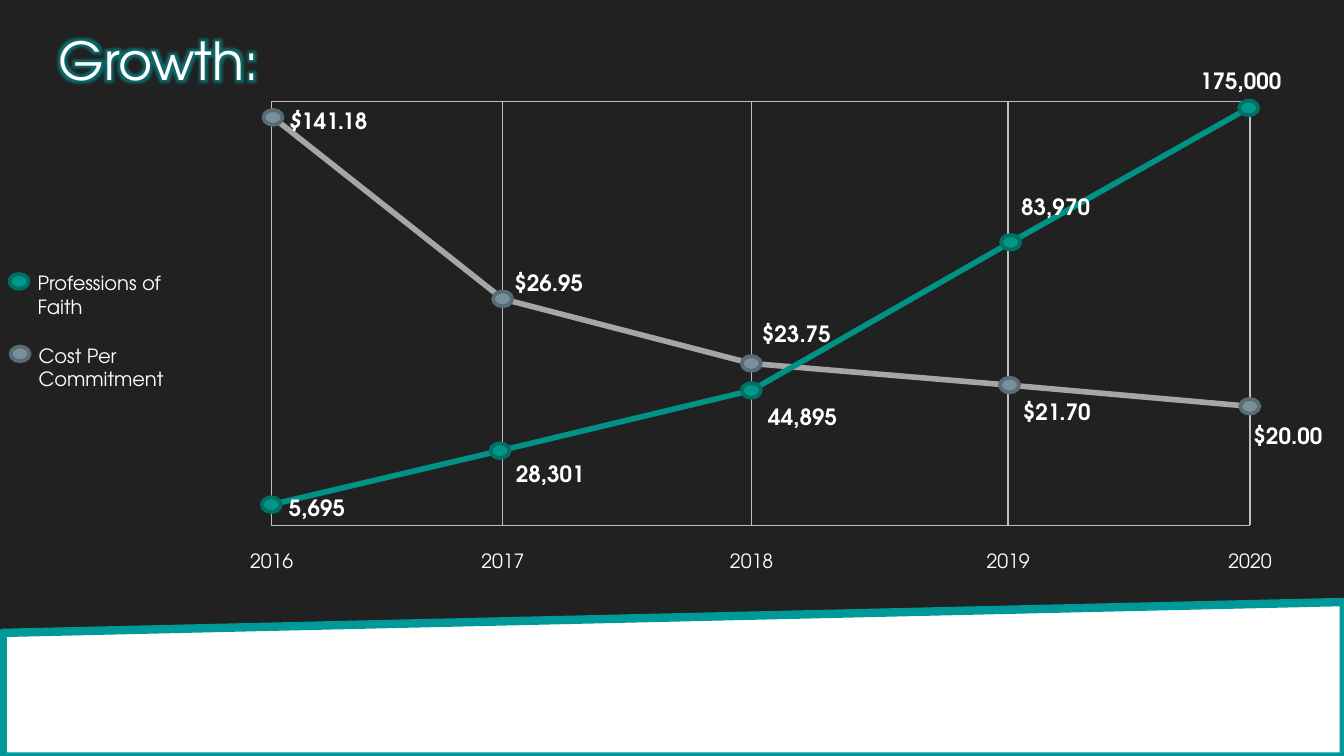
"""Build the Growth slide: two labelled trend lines over a year grid."""
import pptx
import pptx.dml.color
import pptx.enum.shapes
import pptx.enum.text
import pptx.oxml
import pptx.oxml.ns
import pptx.util

Cm = pptx.util.Cm
Pt = pptx.util.Pt
SHAPES = pptx.enum.shapes.MSO_SHAPE


def color(value):
    return pptx.dml.color.RGBColor.from_string(value)


def write_text(frame, text, size=10.5, bold=False, italic_lead=0, glow=None, align="LEFT"):
    paragraph = frame.paragraphs[0]
    paragraph.alignment = getattr(pptx.enum.text.PP_ALIGN, align)
    parts = [(text[:italic_lead], True), (text[italic_lead:], False)]
    for words, italic in parts:
        if not words:
            continue
        run = paragraph.add_run()
        run.text = words
        run.font.name = Style.font
        run.font.size = Pt(size)
        run.font.bold = bold
        run.font.italic = italic
        run.font.color.rgb = color(Style.light)
        if glow:
            fill = run.font._element.find(pptx.oxml.ns.qn("a:solidFill"))
            fill.addnext(pptx.oxml.parse_xml(
                f'<a:effectLst {pptx.oxml.ns.nsdecls("a")}><a:glow rad="101600">'
                f'<a:srgbClr val="{glow}"><a:alpha val="60000"/></a:srgbClr>'
                '</a:glow></a:effectLst>'))


class Style:
    font = "TeX Gyre Adventor"
    light = "FFFFFF"
    dark = "212121"
    accent = "009999"
    grid = "BFBFBF"

    def __init__(self, slide):
        self.slide = slide
        slide.background.fill.solid()
        slide.background.fill.fore_color.rgb = color(self.dark)

    def text(self, left, top, width, height, text, inset=0.13, **text_format):
        frame = self.slide.shapes.add_textbox(
            Cm(left), Cm(top), Cm(width), Cm(height)).text_frame
        frame.word_wrap = True
        frame.margin_top = frame.margin_bottom = Cm(inset)
        write_text(frame, text, **text_format)

    def line(self, start, end, stroke, weight=0.75):
        connector = self.slide.shapes.add_connector(
            pptx.enum.shapes.MSO_CONNECTOR.STRAIGHT, *map(Cm, (*start, *end)))
        connector.line.color.rgb = color(stroke)
        connector.line.width = Pt(weight)
        connector._element.spPr.append(pptx.oxml.parse_xml(
            f'<a:effectLst {pptx.oxml.ns.nsdecls("a")}/>'))

    def shape(self, kind, left, top, width, height, fill, stroke, weight):
        shape = self.slide.shapes.add_shape(
            kind, Cm(left), Cm(top), Cm(width), Cm(height))
        shape.shadow.inherit = False
        shape.fill.solid()
        shape.fill.fore_color.rgb = color(fill)
        shape.line.color.rgb = color(stroke)
        shape.line.width = Pt(weight)

    def dot(self, center, fill, stroke):
        x, y = center
        self.shape(SHAPES.OVAL, x - 0.18, y - 0.14, 0.36, 0.28, fill, stroke, 2)

    def trend(self, points, stroke, dot_colors):
        centers = [center for center, _, _ in points]
        for start, end in zip(centers, centers[1:]):
            self.line(start, end, stroke, 3)
        for center in centers:
            self.dot(center, *dot_colors)

    def labels(self, points):
        for _, (left, top), value in points:
            lead = 1 if value == "$141.18" else 0
            self.text(left, top, 2.1, 0.76, value, size=12, bold=True, italic_lead=lead)


YEARS = {"2016": 5.13, "2017": 9.5, "2018": 14.2, "2019": 19.05, "2020": 23.62}
GRID_TOP, GRID_BOTTOM = 1.92, 9.93
COST_DOT = ("78909C", "596B73")
FAITH_DOT = ("009688", "006F65")
COST = [
    ((5.16, 2.22), (5.21, 1.9), "$141.18"),
    ((9.5, 5.65), (9.47, 4.95), "$26.95"),
    ((14.2, 6.87), (14.15, 5.92), "$23.75"),
    ((19.08, 7.28), (19.08, 7.39), "$21.70"),
    ((23.62, 7.68), (23.44, 7.85), "$20.00"),
]
FAITH = [
    ((5.13, 9.54), (5.21, 9.22), "5,695"),
    ((9.45, 8.52), (9.5, 8.56), "28,301"),
    ((14.2, 7.38), (14.27, 7.49), "44,895"),
    ((19.1, 4.58), (19.05, 3.53), "83,970"),
    ((23.6, 2.04), (22.43, 1.14), "175,000"),
]
LEGEND = [
    ("Professions of Faith", (0.36, 5.32), 3.48, FAITH_DOT),
    ("Cost Per Commitment", (0.38, 6.69), 4, COST_DOT),
]


def main():
    deck = pptx.Presentation()
    deck.slide_width, deck.slide_height = Cm(25.4), Cm(14.29)
    growth = Style(deck.slides.add_slide(deck.slide_layouts[6]))

    growth.text(0.86, 0.28, 23.67, 1.6, "Growth:", inset=0.25, size=28, glow=Style.accent)
    growth.shape(SHAPES.FLOWCHART_MANUAL_INPUT, 0.05, 11.38, 25.35, 2.92,
                 Style.light, Style.accent, 4.5)

    for edge in (GRID_TOP, GRID_BOTTOM):
        growth.line((YEARS["2016"], edge), (YEARS["2020"], edge), Style.grid)
    for year, x in YEARS.items():
        growth.line((x, GRID_BOTTOM), (x, GRID_TOP), Style.grid)
        growth.text(x - 0.77, 10.24, 1.55, 0.71, year, align="CENTER")

    for name, (x, y), width, dot_colors in LEGEND:
        growth.dot((x, y), *dot_colors)
        growth.text(x + 0.1, y - 0.32, width, 1.14, name)

    growth.trend(COST, "A6A6A6", COST_DOT)
    growth.trend(FAITH, "009385", FAITH_DOT)
    growth.labels(COST + FAITH)
    deck.save("out.pptx")


if __name__ == "__main__":
    main()
